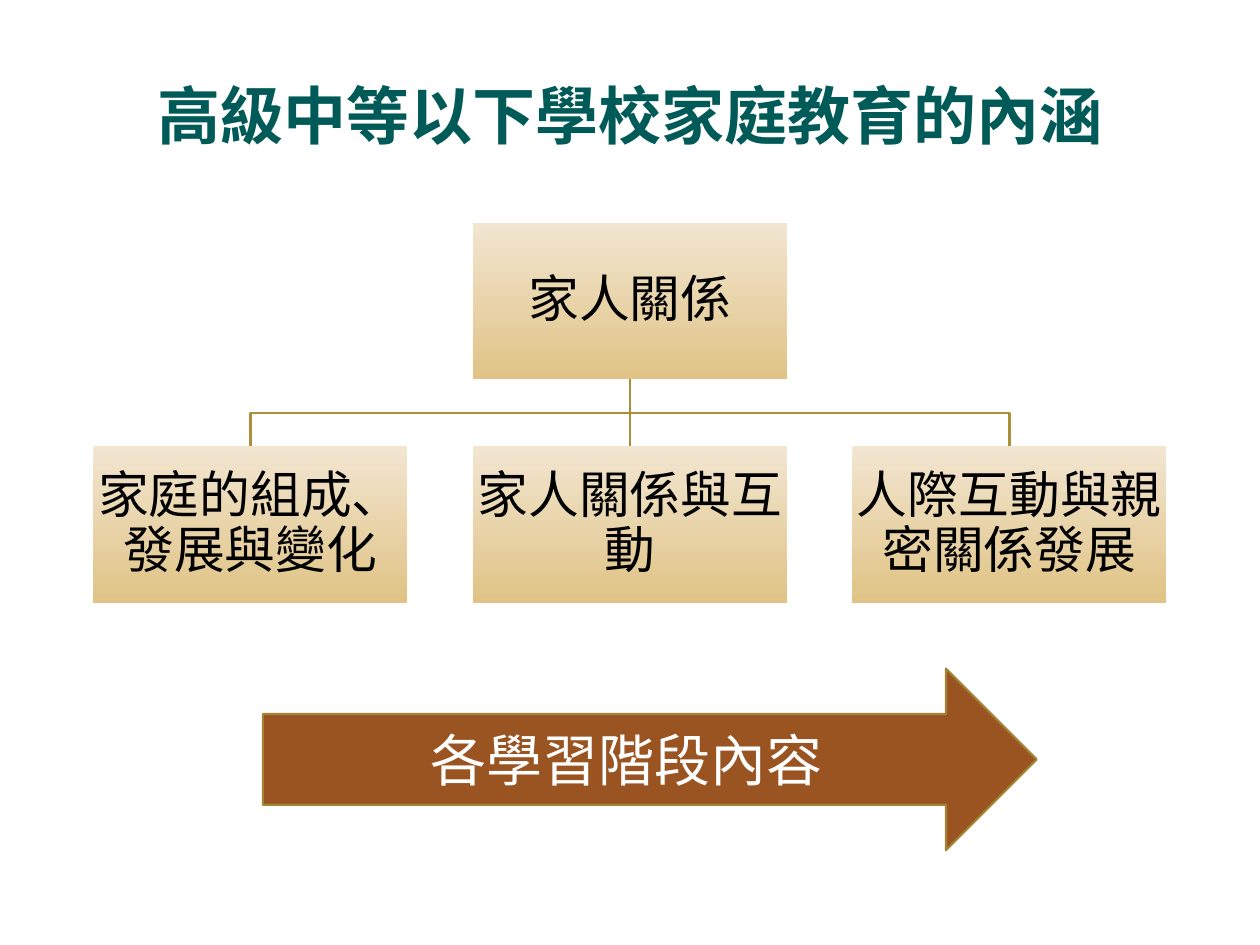
import pptx
import pptx.dml.color
import pptx.enum.shapes
import pptx.enum.text
import pptx.oxml
import pptx.util
from pptx.util import Cm

FONT = "Times New Roman"
BOX_WIDTH, BOX_HEIGHT = 6.33, 3.15
CENTRE, COLUMN_STEP = 12.7, 7.65
PARENT_TOP, CHILD_TOP = 4.5, 9
CHILDREN = ["家庭的組成、發展與變化", "家人關係與互動", "人際互動與親密關係發展"]


def colour(code):
    return pptx.dml.color.RGBColor.from_string(code)


def write(shape, text, size, code, bold=False):
    frame = shape.text_frame
    frame.text = text
    frame.word_wrap = True
    frame.auto_size = pptx.enum.text.MSO_AUTO_SIZE.NONE
    frame.vertical_anchor = pptx.enum.text.MSO_ANCHOR.MIDDLE
    para = frame.paragraphs[0]
    para.alignment = pptx.enum.text.PP_ALIGN.CENTER
    para.font.name = FONT
    para.font.size = pptx.util.Pt(size)
    para.font.bold = bold
    para.font.color.rgb = colour(code)
    return frame


def outline(shape, code):
    shape.line.color.rgb = colour(code)
    shape.line.width = pptx.util.Pt(1.25)


def add_title(page, text):
    title = page.shapes.title
    title.left, title.top = Cm(1.27), Cm(1.42)
    title.width, title.height = Cm(22.86), Cm(1.75)
    write(title, text, 36, "005A58", bold=True)


def add_box(page, centre, top, text):
    box = page.shapes.add_shape(
        pptx.enum.shapes.MSO_SHAPE.RECTANGLE,
        Cm(centre - BOX_WIDTH / 2), Cm(top), Cm(BOX_WIDTH), Cm(BOX_HEIGHT))
    box.shadow.inherit = False
    box.line.fill.background()
    box.fill.gradient()
    box.fill.gradient_angle = 270
    for stop, position, code in zip(box.fill.gradient_stops, (0, 1), ("F2E6D1", "E0C385")):
        stop.position = position
        stop.color.rgb = colour(code)
    frame = write(box, text, 29, "000000")
    frame.margin_left = frame.margin_right = Cm(0.05)
    frame.margin_top = frame.margin_bottom = Cm(0.05)
    frame.paragraphs[0].line_spacing = 0.9


def add_branch(page, child_centre):
    start = PARENT_TOP + BOX_HEIGHT
    if child_centre == CENTRE:
        branch = page.shapes.add_connector(
            pptx.enum.shapes.MSO_CONNECTOR.STRAIGHT,
            Cm(CENTRE), Cm(start), Cm(CENTRE), Cm(CHILD_TOP))
        branch._element.spPr.append(pptx.oxml.parse_xml(
            '<a:effectLst xmlns:a="http://schemas.openxmlformats.org/drawingml/2006/main"/>'))
    else:
        middle = (start + CHILD_TOP) / 2
        corners = [(CENTRE, middle), (child_centre, middle), (child_centre, CHILD_TOP)]
        builder = page.shapes.build_freeform(Cm(CENTRE), Cm(start))
        builder.add_line_segments([(Cm(x), Cm(y)) for x, y in corners], close=False)
        branch = builder.convert_to_shape()
        branch.shadow.inherit = False
        branch.fill.background()
    outline(branch, "AE8F39")


def add_arrow(page, text):
    arrow = page.shapes.add_shape(
        pptx.enum.shapes.MSO_SHAPE.RIGHT_ARROW, Cm(5.3), Cm(13.48), Cm(15.6), Cm(3.66))
    arrow.shadow.inherit = False
    arrow.fill.solid()
    arrow.fill.fore_color.rgb = colour("995422")
    outline(arrow, "A18435")
    write(arrow, text, 32, "FFFFFF")


def main():
    deck = pptx.Presentation()
    deck.slide_width, deck.slide_height = Cm(25.4), Cm(19.05)
    page = deck.slides.add_slide(deck.slide_layouts.get_by_name("Title Only"))
    add_title(page, "高級中等以下學校家庭教育的內涵")
    centres = [CENTRE + COLUMN_STEP * column for column in (-1, 0, 1)]
    for centre in centres:
        add_branch(page, centre)
    add_box(page, CENTRE, PARENT_TOP, "家人關係")
    for centre, text in zip(centres, CHILDREN):
        add_box(page, centre, CHILD_TOP, text)
    add_arrow(page, "各學習階段內容")
    deck.save("out.pptx")


if __name__ == "__main__":
    main()
